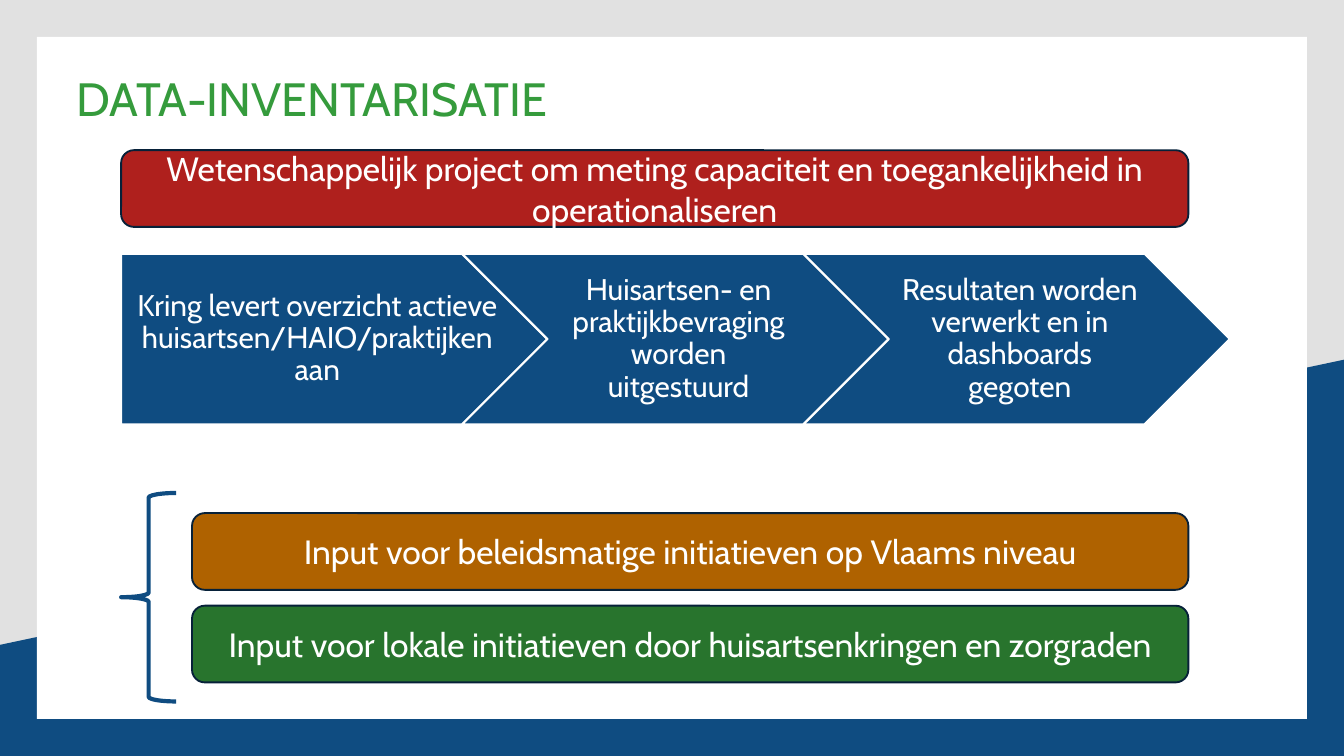
from dataclasses import dataclass

from pptx import Presentation
from pptx import util as u
from pptx.dml.color import RGBColor
from pptx.enum import shapes, text


@dataclass(frozen=True)
class Theme:
    """Colours, font and type sizes of the slide."""
    backdrop: str = "E1E1E1"
    blue: str = "0F4C81"
    navy: str = "072139"
    white: str = "FFFFFF"
    title_green: str = "359B3C"
    red: str = "AF201D"
    orange: str = "AF6200"
    green: str = "28742D"
    font: str = "Cabin"
    title_size: float = 25
    step_size: float = 16
    bar_size: float = 18


THEME = Theme()
SHAPE = shapes.MSO_SHAPE
WIDTH, HEIGHT = 25.4, 14.29


def set_values(target, values):
    """Set each named attribute of the target."""
    for name, value in values.items():
        setattr(target, name, value)


def style(shape, fill=None, line=None, weight=1):
    """Give a shape its fill and outline, without a shadow."""
    shape.shadow.inherit = False
    if fill:
        shape.fill.solid()
        shape.fill.fore_color.rgb = RGBColor.from_string(fill)
    else:
        shape.fill.background()
    if line:
        shape.line.color.rgb = RGBColor.from_string(line)
        shape.line.width = u.Pt(weight)
    else:
        shape.line.fill.background()


def add_shape(parent, kind, box, **look):
    """Add a styled preset shape in a box given in centimetres."""
    shape = parent.add_shape(kind, *map(u.Cm, box))
    style(shape, **look)
    return shape


def write(shape, words, size, color=THEME.white, align=text.PP_ALIGN.CENTER,
          anchor=text.MSO_ANCHOR.MIDDLE, spacing=1.0, insets=(0.25, 0.13, 0.25, 0.13)):
    """Write one formatted paragraph in a shape."""
    frame = shape.text_frame
    sides = ("margin_left", "margin_top", "margin_right", "margin_bottom")
    set_values(frame, dict(zip(sides, map(u.Cm, insets))))
    set_values(frame, {"word_wrap": True, "vertical_anchor": anchor})
    paragraph = frame.paragraphs[0]
    set_values(paragraph, {"alignment": align, "line_spacing": spacing})
    run = paragraph.add_run()
    run.text = words
    set_values(run.font, {"name": THEME.font, "size": u.Pt(size)})
    run.font.color.rgb = RGBColor.from_string(color)


def add_backdrop(slide, box):
    """Draw the grey ground, the blue slope and the white panel."""
    left, top, width, height = box
    slide.background.fill.solid()
    slide.background.fill.fore_color.rgb = RGBColor.from_string(THEME.backdrop)
    right, bottom = left + width, top + height
    points = [(right, 6.8), (right, bottom), (left, bottom), (left, 12.19)]
    corners = [(u.Cm(x), u.Cm(y)) for x, y in points]
    builder = slide.shapes.build_freeform(*corners[0])
    builder.add_line_segments(corners[1:], close=True)
    style(builder.convert_to_shape(), fill=THEME.blue)
    margin = 0.7
    panel = (left + margin, top + margin, width - 2 * margin, height - 2 * margin)
    add_shape(slide.shapes, SHAPE.RECTANGLE, panel, fill=THEME.white)


def add_title(slide, box, words):
    """Place the slide title."""
    title = slide.shapes.add_textbox(*map(u.Cm, box))
    write(title, words, THEME.title_size, THEME.title_green, text.PP_ALIGN.LEFT,
          text.MSO_ANCHOR.TOP, 0.9, (0, 0, 0, 0))


def add_process(slide, box, steps):
    """Lay out interlocking arrows, the first one with a flat back."""
    left, top, width, height = box
    point = height / 2
    overlap = height / 2 - 0.01
    step_width = (width + overlap * (len(steps) - 1)) / len(steps)
    group = slide.shapes.add_group_shape().shapes
    for index, words in enumerate(steps):
        x = left + index * (step_width - overlap)
        kind = SHAPE.CHEVRON if index else SHAPE.PENTAGON
        add_shape(group, kind, (x, top, step_width, height),
                  fill=THEME.blue, line=THEME.white)
        indent = point if index else 0
        text_width = step_width - (2 * point if index else point / 2)
        label = group.add_textbox(*map(u.Cm, (x + indent, top, text_width, height)))
        write(label, words, THEME.step_size, spacing=0.9,
              insets=(0.18 if index else 0.23, 0.13, 0.06, 0.13))


def add_bar(slide, box, words, fill):
    """Add a rounded bar with centred text."""
    bar = add_shape(slide.shapes, SHAPE.ROUNDED_RECTANGLE, box,
                    fill=fill, line=THEME.navy)
    write(bar, words, THEME.bar_size)


def add_outcomes(slide, box, outcomes):
    """Stack the outcome bars beside a brace."""
    left, top, width, height = box
    add_shape(slide.shapes, SHAPE.LEFT_BRACE, (left, top, 1.04, height),
              line=THEME.blue, weight=2.25)
    indent, offset, pitch, bar_height = 1.34, 0.38, 1.75, 1.45
    for index, (words, fill) in enumerate(outcomes):
        y = top + offset + index * pitch
        add_bar(slide, (left + indent, y, width - indent, bar_height), words, fill)


def main():
    """Build and save the slide."""
    presentation = Presentation()
    set_values(presentation, {"slide_width": u.Cm(WIDTH), "slide_height": u.Cm(HEIGHT)})
    slide = presentation.slides.add_slide(presentation.slide_layouts[6])
    left, width = 2.29, 20.17
    add_backdrop(slide, (0, 0, WIDTH, HEIGHT))
    add_title(slide, (1.45, 1.45, 22.6, 2.2), "DATA-INVENTARISATIE")
    add_process(slide, (left, 4.8, 20.95, 3.22), [
        "Kring levert overzicht actieve huisartsen/HAIO/praktijken aan",
        "Huisartsen- en praktijkbevraging worden uitgestuurd",
        "Resultaten worden verwerkt en in dashboards gegoten",
    ])
    add_outcomes(slide, (left, 9.32, width, 3.94), [
        ("Input voor beleidsmatige initiatieven op Vlaams niveau", THEME.orange),
        ("Input voor lokale initiatieven door huisartsenkringen en zorgraden", THEME.green),
    ])
    add_bar(slide, (left, 2.84, width, 1.45),
            "Wetenschappelijk project om meting capaciteit en toegankelijkheid "
            "in operationaliseren", THEME.red)
    presentation.save("out.pptx")


if __name__ == "__main__":
    main()
